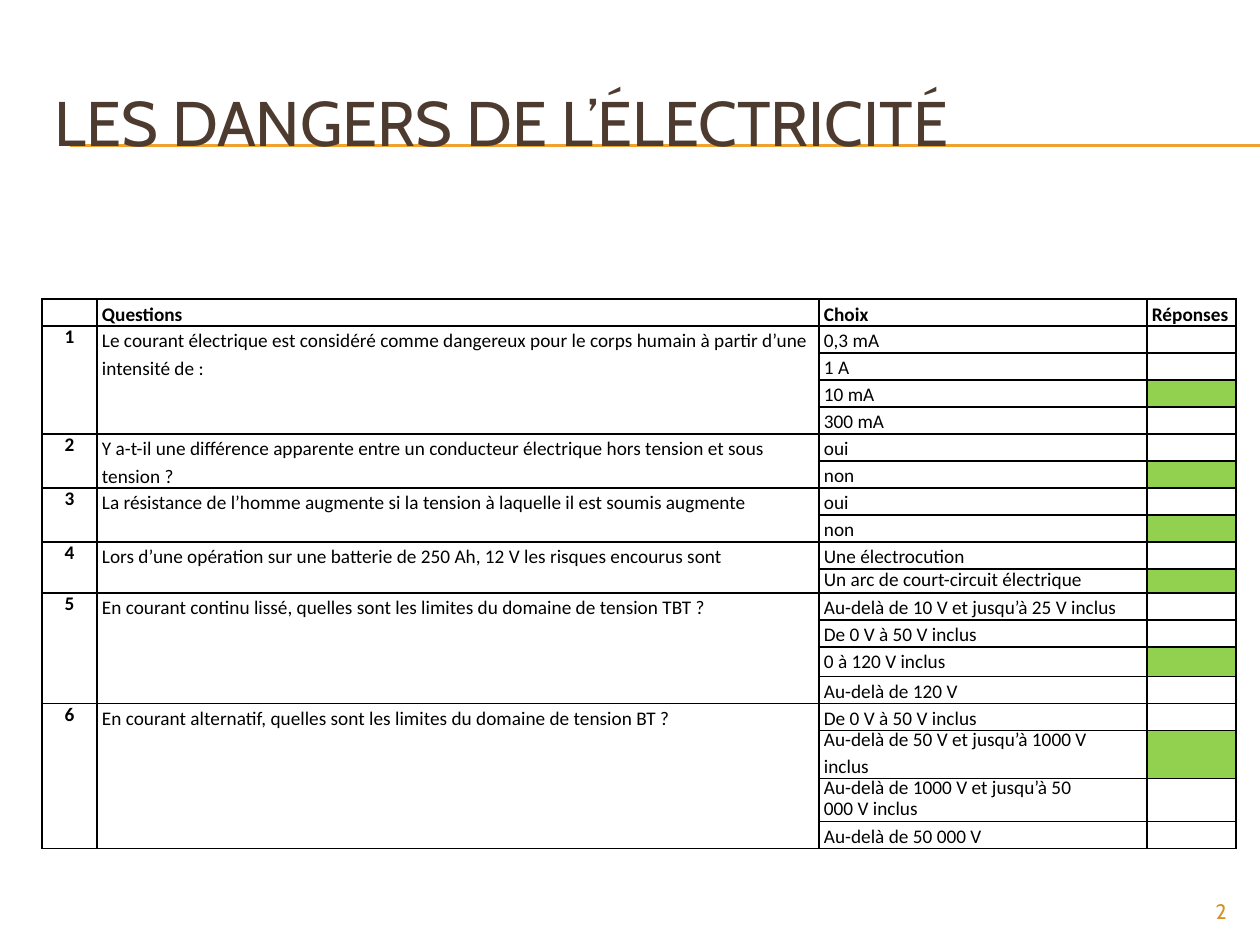
from lxml.etree import SubElement
from pptx import Presentation
from pptx.dml.color import RGBColor
from pptx.enum.shapes import MSO_CONNECTOR
from pptx.enum.text import MSO_ANCHOR, PP_ALIGN
from pptx.oxml.ns import qn
from pptx.util import Pt

# Content
TITLE = "LES DANGERS DE L’ÉLECTRICITÉ"
PAGE = "2"
HEADS = ["", "Questions", "Choix", "Réponses"]
# Each choice: lines, row height in px, line spacing of each line
WIDE, EXACT, TIGHT = 1.15, Pt(13.2), Pt(12.1)
ROW = 27


def pick(*lines, high=ROW, leads=(WIDE,)):
    return lines, high, leads


# Each question: text, choices, index of the right choice
QUIZ = [
    ("Le courant électrique est considéré comme dangereux pour le corps humain "
     "à partir d’une intensité de :",
     [pick("0,3 mA"), pick("1 A"), pick("10 mA"), pick("300 mA")], 2),
    ("Y a-t-il une différence apparente entre un conducteur électrique hors "
     "tension et sous tension ?",
     [pick("oui"), pick("non")], 1),
    ("La résistance de l’homme augmente si la tension à laquelle il est soumis "
     "augmente",
     [pick("oui"), pick("non")], 1),
    ("Lors d’une opération sur une batterie de 250 Ah, 12 V les risques "
     "encourus sont",
     [pick("Une électrocution"),
      pick("Un arc de court-circuit électrique", high=24, leads=(EXACT,))], 1),
    ("En courant continu lissé, quelles sont les limites du domaine de tension "
     "TBT ?",
     [pick("Au-delà de 10 V et jusqu’à 25 V inclus"),
      pick("De 0 V à 50 V inclus"),
      pick("0 à 120 V inclus", high=30),
      pick("Au-delà de 120 V")], 2),
    ("En courant alternatif, quelles sont les limites du domaine de tension "
     "BT ?",
     [pick("De 0 V à 50 V inclus"),
      pick("Au-delà de 50 V et jusqu’à 1000 V", "inclus",
           high=48, leads=(TIGHT, WIDE)),
      pick("Au-delà de 1000 V et jusqu’à 50", "000 V inclus",
           high=43, leads=(TIGHT, TIGHT)),
      pick("Au-delà de 50 000 V")], 1),
]

# Look
HEX = {"title": "4E3B30", "rule": "F0A22E", "page": "D48F29",
       "ink": "000000", "paper": "FFFFFF", "right": "92D050"}
COLS = [55, 722, 328, 89]
LEFT, TOP = 42, 299


def px(n):
    return round(n * 914400 / 126)


def tint(name):
    return RGBColor.from_string(HEX[name])


def write(frame, lines, size=11, font="Calibri", color="ink", bold=False,
          align=PP_ALIGN.LEFT, leads=(1.0,)):
    for i, (line, lead) in enumerate(zip(lines, leads)):
        par = frame.paragraphs[0] if i == 0 else frame.add_paragraph()
        par.alignment, par.line_spacing = align, lead
        run = par.add_run()
        run.text = line
        run.font.size, run.font.name, run.font.bold = Pt(size), font, bold
        run.font.color.rgb = tint(color)


def dress(cell, fill="paper", pad=5):
    cell.margin_left = px(pad)
    cell.margin_right = cell.margin_top = cell.margin_bottom = 0
    props = cell._tc.get_or_add_tcPr()
    for side in ("lnL", "lnR", "lnT", "lnB"):
        edge = SubElement(props, qn("a:" + side), w=str(Pt(1)))
        paint = SubElement(edge, qn("a:solidFill"))
        SubElement(paint, qn("a:srgbClr"), val=HEX["ink"])
    cell.fill.solid()
    cell.fill.fore_color.rgb = tint(fill)
    # Small text size keeps empty cells from stretching their rows
    par = cell.text_frame.paragraphs[0]._p
    SubElement(par, qn("a:endParaRPr"), sz="1100")


deck = Presentation()
deck.slide_width, deck.slide_height = px(1260), px(945)
slide = deck.slides.add_slide(deck.slide_layouts[5])
shapes = slide.shapes

# Double rule behind the title
for y in (145, 146):
    rule = shapes.add_connector(MSO_CONNECTOR.STRAIGHT,
                                px(70), px(y), px(1260), px(y))
    rule.line.color.rgb = tint("rule")
    rule.line.width = Pt(0.75)
    SubElement(rule._element.spPr, qn("a:effectLst"))

# Title, brought in front of the rule
title = shapes.title
title.left, title.top, title.width, title.height = map(px, (42, 63, 1197, 116))
title.text_frame.vertical_anchor = MSO_ANCHOR.MIDDLE
write(title.text_frame, [TITLE], size=36, font="Cabin", color="title")
shapes._spTree.append(title._element)

# Page number
page = shapes.add_textbox(px(1134), px(892), px(105), px(34))
page.text_frame.word_wrap = True
write(page.text_frame, [PAGE], size=12, font="Cabin", color="page",
      align=PP_ALIGN.RIGHT)

# Table grid
highs = [ROW] + [high for _, picks, _ in QUIZ for _, high, _ in picks]
grid = shapes.add_table(len(highs), len(COLS), px(LEFT), px(TOP),
                        px(sum(COLS)), px(sum(highs))).table
grid.first_row = grid.horz_banding = False
for col, wide in zip(grid.columns, COLS):
    col.width = px(wide)
for row, high in zip(grid.rows, highs):
    row.height = px(high)

# Right answers are the green cells
green, start = set(), 1
for _, picks, right in QUIZ:
    green.add(start + right)
    start += len(picks)
for r in range(len(highs)):
    for c in range(len(COLS)):
        dress(grid.cell(r, c), fill="right" if c == 3 and r in green else "paper",
              pad=0 if c == 0 else 5)

# Table text
for c, head in enumerate(HEADS):
    if head:
        write(grid.cell(0, c).text_frame, [head], bold=True, leads=(WIDE,))
start = 1
for num, (ask, picks, _) in enumerate(QUIZ, 1):
    last = start + len(picks) - 1
    for c in (0, 1):
        grid.cell(start, c).merge(grid.cell(last, c))
    write(grid.cell(start, 0).text_frame, [str(num)], bold=True,
          align=PP_ALIGN.CENTER, leads=(EXACT,))
    write(grid.cell(start, 1).text_frame, [ask], leads=(WIDE,))
    for r, (lines, _, leads) in enumerate(picks, start):
        write(grid.cell(r, 2).text_frame, lines, leads=leads)
    start = last + 1

deck.save("out.pptx")
